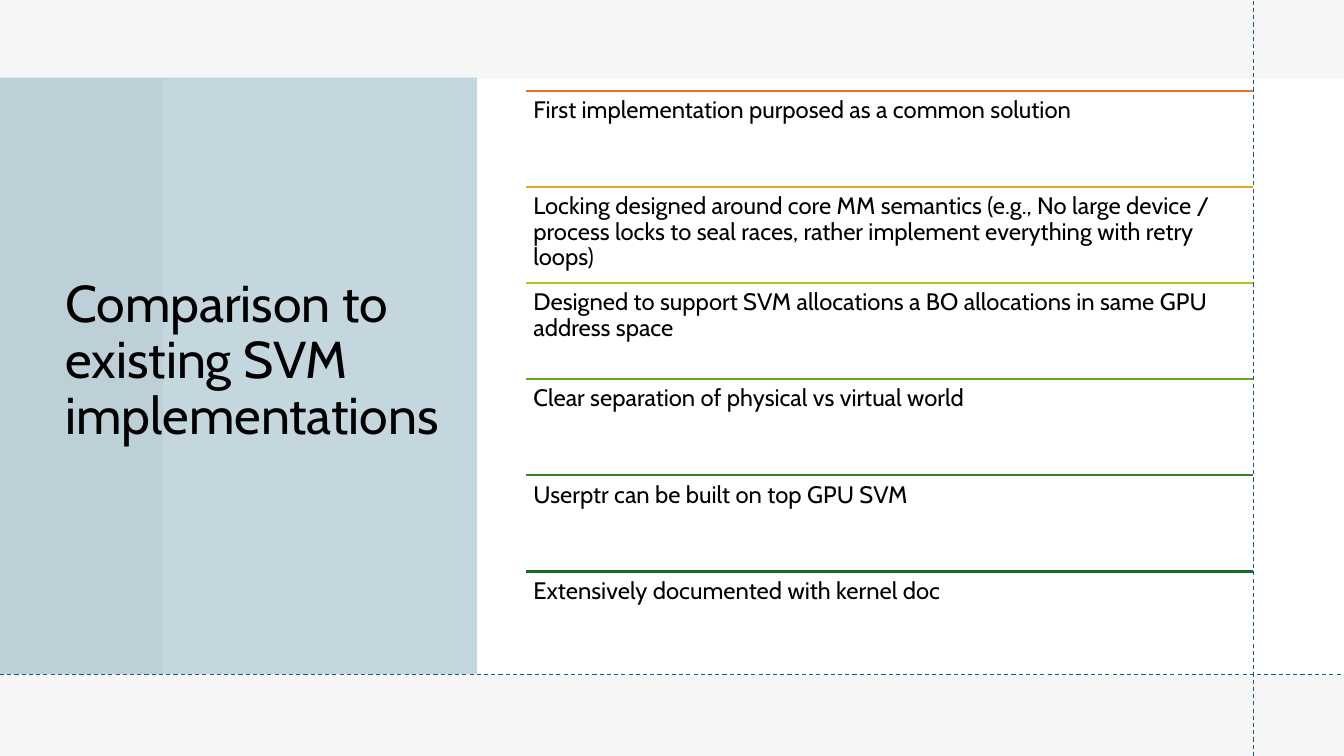
from lxml import etree
from pptx import Presentation
from pptx.dml.color import RGBColor
from pptx.enum.dml import MSO_LINE
from pptx.enum.shapes import MSO_CONNECTOR, MSO_SHAPE
from pptx.enum.text import MSO_ANCHOR, MSO_AUTO_SIZE, PP_ALIGN
from pptx.oxml.ns import qn
from pptx.util import Inches, Pt

RECT = MSO_SHAPE.RECTANGLE
STRAIGHT = MSO_CONNECTOR.STRAIGHT
DASH = MSO_LINE.DASH
TOP, MIDDLE = MSO_ANCHOR.TOP, MSO_ANCHOR.MIDDLE
LEFT = PP_ALIGN.LEFT
NO_FIT = MSO_AUTO_SIZE.NONE

FONT = "Cabin"
WIDE, HIGH = 13.33, 7.5
LIST_X, LIST_Y, EDGE, STEP = 5.22, 0.9, 12.43, 0.954
POINTS = [
    ("E97132", "First implementation purposed as a common solution"),
    ("E0A61D", "Locking designed around core MM semantics (e.g., No large device / "
               "process locks to seal races, rather implement everything with retry loops)"),
    ("B7C11E", "Designed to support SVM allocations a BO allocations in same GPU address space"),
    ("6BA31D", "Clear separation of physical vs virtual world"),
    ("34861C", "Userptr can be built on top GPU SVM"),
    ("196B24", "Extensively documented with kernel doc"),
]


def paint(color, value):
    """Set a colour format from a hex string."""
    color.rgb = RGBColor.from_string(value)


def add_block(slide, box, value, alpha=100):
    """Add a borderless rectangle with the given opacity in percent."""
    block = slide.shapes.add_shape(RECT, *map(Inches, box))
    block.shadow.inherit = False
    block.line.fill.background()
    block.fill.solid()
    paint(block.fill.fore_color, value)
    if alpha < 100:
        tint = block.element.spPr.find(qn("a:solidFill"))[0]
        etree.SubElement(tint, qn("a:alpha"), val=str(alpha * 1000))
    return block


def add_rule(slide, ends, value, width, dash=None):
    """Add a straight line between two points."""
    rule = slide.shapes.add_connector(STRAIGHT, *map(Inches, ends))
    rule.line.width = Pt(width)
    paint(rule.line.color, value)
    if dash is not None:
        rule.line.dash_style = dash
    etree.SubElement(rule.element.spPr, qn("a:effectLst"))


def set_text(shape, text, size, anchor):
    """Fill a shape with one left-aligned paragraph."""
    frame = shape.text_frame
    frame.text = text
    frame.word_wrap = True
    frame.auto_size = NO_FIT
    frame.vertical_anchor = anchor
    para = frame.paragraphs[0]
    para.alignment = LEFT
    para.line_spacing = 0.9
    font = para.runs[0].font
    font.name = FONT
    font.size = Pt(size)
    paint(font.color, "000000")


def add_title(slide, panel, text):
    """Place the title just above the tinted panel."""
    title = slide.shapes.title
    title.left, title.top = Inches(0.55), Inches(0.74)
    title.width, title.height = Inches(3.95), Inches(5.69)
    set_text(title, text, 37, MIDDLE)
    panel.element.addnext(title.element)


def add_point(slide, top, value, text):
    """Add one list entry under its coloured rule."""
    add_rule(slide, (LIST_X, top, EDGE, top), value, 1.5)
    box = slide.shapes.add_textbox(*map(Inches, (LIST_X, top, EDGE - LIST_X, STEP)))
    set_text(box, text, 17, TOP)
    frame = box.text_frame
    frame.margin_left = frame.margin_right = Inches(0.07)
    frame.margin_top = frame.margin_bottom = Inches(0.07)


def main():
    """Build and save the slide."""
    deck = Presentation()
    deck.slide_width, deck.slide_height = Inches(WIDE), Inches(HIGH)
    slide = deck.slides.add_slide(deck.slide_layouts[5])
    add_block(slide, (0, 0, WIDE, HIGH), "FFFFFF")
    add_block(slide, (0, 0, WIDE, HIGH), "E8E8E8", 35)
    add_block(slide, (1.62, 0.78, WIDE - 1.62, 5.92), "FFFFFF")
    panel = add_block(slide, (0, 0.77, 4.73, 5.92), "156082", 25)
    add_title(slide, panel, "Comparison to existing SVM implementations")
    add_rule(slide, (EDGE, HIGH, EDGE, 0), "156082", 0.75, DASH)
    add_rule(slide, (0, 6.69, WIDE, 6.69), "156082", 0.75, DASH)
    for i, (value, text) in enumerate(POINTS):
        add_point(slide, LIST_Y + i * STEP, value, text)
    deck.save("out.pptx")


if __name__ == "__main__":
    main()
